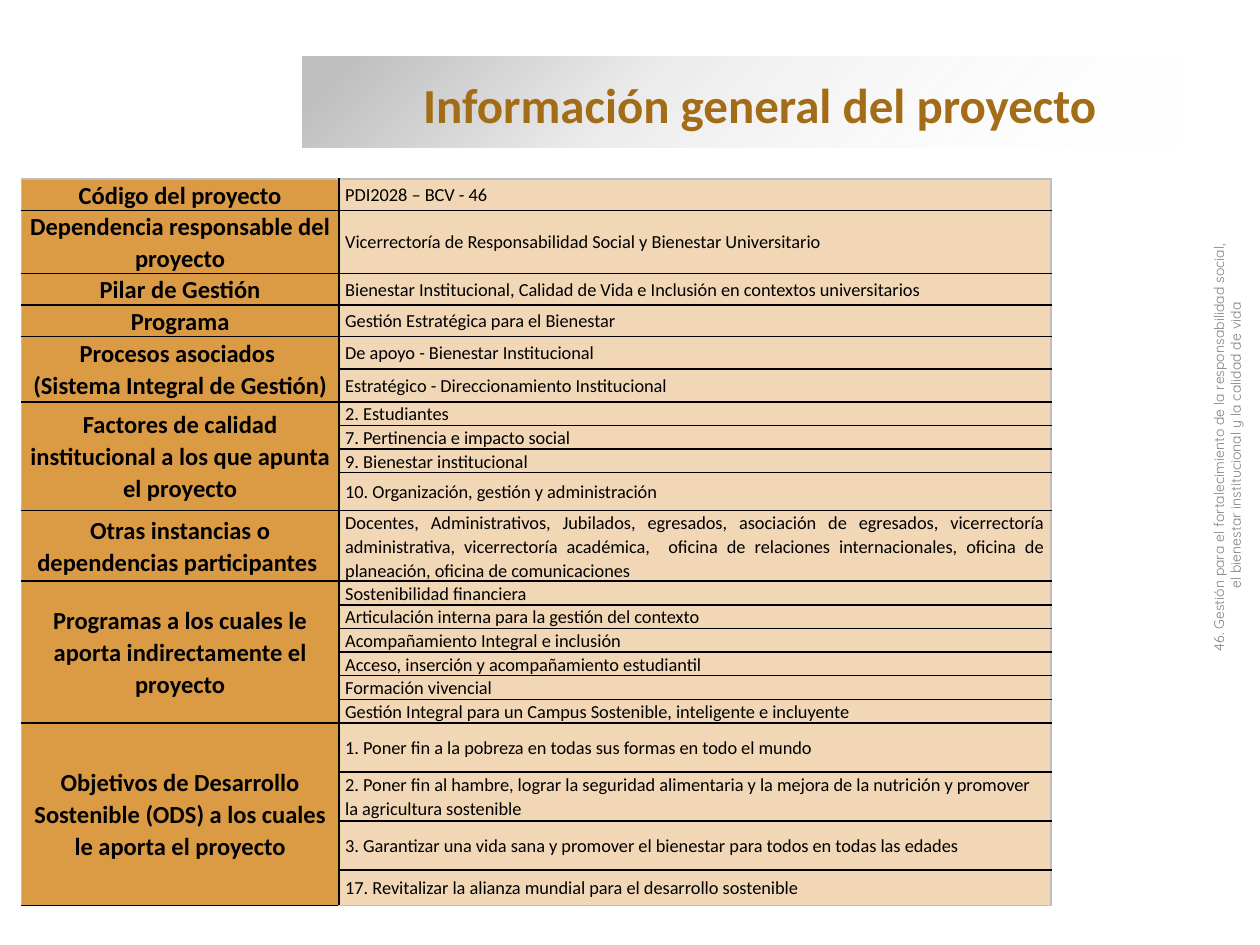
from lxml import etree
from pptx import Presentation, util as u
from pptx.dml.color import RGBColor
from pptx.enum import shapes, text
from pptx.oxml import parse_xml
from pptx.oxml.ns import nsdecls, qn

COLORS = {"title": "A26D16", "side": "808080", "text": "000000", "label": "DB9B45",
          "value": "F1D7B5", "line": "000000", "edge": "BFBFBF", "band": "BFBFBF", "white": "FFFFFF"}
COLUMNS, ROWS = 100, 75
LEFT, CENTER, JUSTIFY = text.PP_ALIGN.LEFT, text.PP_ALIGN.CENTER, text.PP_ALIGN.JUSTIFY

# Label, values with their row heights in grid rows, format of the values
PROJECT = [
    ("Código del proyecto", [("PDI2028 – BCV - 46", 2)], {}),
    ("Dependencia responsable del proyecto",
     [("Vicerrectoría de Responsabilidad Social y Bienestar Universitario", 3.9)], {}),
    ("Pilar de Gestión",
     [("Bienestar Institucional, Calidad de Vida e Inclusión en contextos universitarios", 2)], {}),
    ("Programa", [("Gestión Estratégica para el Bienestar", 2)], {"align": JUSTIFY}),
    ("Procesos asociados \v(Sistema Integral de Gestión)",
     [("De apoyo - Bienestar Institucional", 2.6),
      ("Estratégico - Direccionamiento Institucional", 2.6)], {}),
    ("Factores de calidad institucional a los que apunta el proyecto",
     [("2. Estudiantes", 1.5),
      ("7. Pertinencia e impacto social", 1.5),
      ("9. Bienestar institucional", 1.5),
      ("10. Organización, gestión y administración", 3)], {}),
    ("Otras instancias o dependencias participantes ",
     [("Docentes, Administrativos, Jubilados, egresados, asociación de egresados, "
       "vicerrectoría administrativa, vicerrectoría académica,  oficina de relaciones "
       "internacionales, oficina de planeación, oficina de comunicaciones", 4.2)],
     {"align": JUSTIFY}),
    ("Programas a los cuales le aporta indirectamente el proyecto",
     [("Sostenibilidad financiera", 1.5),
      ("Articulación interna para la gestión del contexto", 1.5),
      ("Acompañamiento Integral e inclusión", 1.5),
      ("Acceso, inserción y acompañamiento estudiantil", 1.5),
      ("Formación vivencial", 1.5),
      ("Gestión Integral para un Campus Sostenible, inteligente e incluyente", 1.5)],
     {"after": 8}),
    ("Objetivos de Desarrollo Sostenible (ODS) a los cuales le aporta el proyecto",
     [("1. Poner fin a la pobreza en todas sus formas en todo el mundo", 3.9),
      ("2. Poner fin al hambre, lograr la seguridad alimentaria y la mejora de la nutrición "
       "y promover la agricultura sostenible", 3.9),
      ("3. Garantizar una vida sana y promover el bienestar para todos en todas las edades", 3.9),
      ("17. Revitalizar la alianza mundial para el desarrollo sostenible", 2.8)], {}),
]


def write(frame, content, *, size, color="text", font="Calibri", bold=False,
          align=LEFT, spacing=None, after=None):
    for index, line in enumerate(content.split("\n")):
        paragraph = frame.paragraphs[0] if index == 0 else frame.add_paragraph()
        paragraph.text = line
        paragraph.alignment = align
        if spacing:
            paragraph.line_spacing = spacing
        if after:
            paragraph.space_after = u.Pt(after)
        for run in paragraph.runs:
            run.font.size, run.font.name, run.font.bold = u.Pt(size), font, bold
            run.font.color.rgb = RGBColor.from_string(COLORS[color])


def set_borders(cell, sides):
    """Draw 1 pt borders; sides maps L, R, T and B to colour names."""
    properties = cell._tc.get_or_add_tcPr()
    for index, side in enumerate("LRTB"):
        properties.insert(index, parse_xml(
            f'<a:ln{side} {nsdecls("a")} w="12700"><a:solidFill>'
            f'<a:srgbClr val="{COLORS[sides[side]]}"/></a:solidFill></a:ln{side}>'))


class ProjectSlide:
    def __init__(self, deck):
        self.slide = deck.slides.add_slide(deck.slide_layouts[6])
        self.column = deck.slide_width / COLUMNS
        self.row = deck.slide_height / ROWS

    def place(self, left, top, width, height):
        return (round(left * self.column), round(top * self.row),
                round(width * self.column), round(height * self.row))

    def fading_band(self, *area):
        band = self.slide.shapes.add_shape(shapes.MSO_SHAPE.RECTANGLE, *self.place(*area))
        band.shadow.inherit = False
        band.line.fill.background()
        band.fill.gradient()
        gradient = band._element.spPr.find(qn("a:gradFill"))
        stops = gradient.find(qn("a:gsLst"))
        for stop in list(stops):
            stops.remove(stop)
        for position, color, alpha in ((5, "band", 100), (37, "band", 31), (100, "white", 0)):
            stop = etree.SubElement(stops, qn("a:gs"), pos=str(position * 1000))
            tint = etree.SubElement(stop, qn("a:srgbClr"), val=COLORS[color])
            etree.SubElement(tint, qn("a:alpha"), val=str(alpha * 1000))
        direction = gradient.find(qn("a:lin"))
        direction.set("ang", str(45 * 60000))
        direction.set("scaled", "0")
        return band

    def text_box(self, content, *area, rotation=0, anchor=text.MSO_ANCHOR.TOP, **style):
        box = self.slide.shapes.add_textbox(*self.place(*area))
        box.rotation = rotation
        frame = box.text_frame
        frame.word_wrap = True
        frame.auto_size = text.MSO_AUTO_SIZE.SHAPE_TO_FIT_TEXT
        frame.vertical_anchor = anchor
        write(frame, content, **style)
        return box

    def cell(self, cell, fill, inset, sides):
        cell.fill.solid()
        cell.fill.fore_color.rgb = RGBColor.from_string(COLORS[fill])
        cell.vertical_anchor = text.MSO_ANCHOR.MIDDLE
        cell.margin_left = cell.margin_right = u.Inches(inset)
        cell.margin_top = cell.margin_bottom = 0
        set_borders(cell, sides)

    def project_table(self, project, widths, *area):
        heights = [height for _, values, _ in project for _, height in values]
        last = len(heights) - 1
        frame = self.slide.shapes.add_table(len(heights), len(widths), *self.place(*area))
        table = frame.table
        table.first_row = table.horz_banding = False
        for column, width in zip(table.columns, widths):
            column.width = round(width * self.column)
        for index, height in enumerate(heights):
            table.rows[index].height = round(height * self.row)
            level = {"T": "line" if index else "edge", "B": "line" if index < last else "edge"}
            self.cell(table.cell(index, 0), "label", 0.04, {"L": "edge", "R": "line", **level})
            self.cell(table.cell(index, 1), "value", 0.05, {"L": "line", "R": "edge", **level})
        frame.height = self.place(*area)[3]

        start = 0
        for label, values, style in project:
            heading = table.cell(start, 0)
            if len(values) > 1:
                heading.merge(table.cell(start + len(values) - 1, 0))
            write(heading.text_frame, label, size=14, bold=True, align=CENTER, spacing=1.07)
            for offset, (value, _) in enumerate(values):
                write(table.cell(start + offset, 1).text_frame, value,
                      size=10.5, spacing=1.07, **style)
            start += len(values)


def main():
    deck = Presentation()
    deck.slide_width, deck.slide_height = u.Inches(10), u.Inches(7.5)
    page = ProjectSlide(deck)
    band = page.fading_band(24, 4.5, 69.8, 7.2)
    title = page.text_box("Información general del proyecto", 32.6, 5.4, 62, 5.7,
                          anchor=text.MSO_ANCHOR.MIDDLE, size=28, color="title", bold=True)
    page.slide.shapes.add_group_shape([band, title])
    page.text_box("46. Gestión para el fortalecimiento de la responsabilidad social, \n"
                  "el bienestar institucional y la calidad de vida",
                  73.2, 33.5, 48.4, 3.7, rotation=270, size=8, color="side",
                  font="Quicksand", align=CENTER)
    page.project_table(PROJECT, (25.2, 56.5), 1.7, 14.2, 81.7, 57.5)
    deck.save("out.pptx")


if __name__ == "__main__":
    main()
